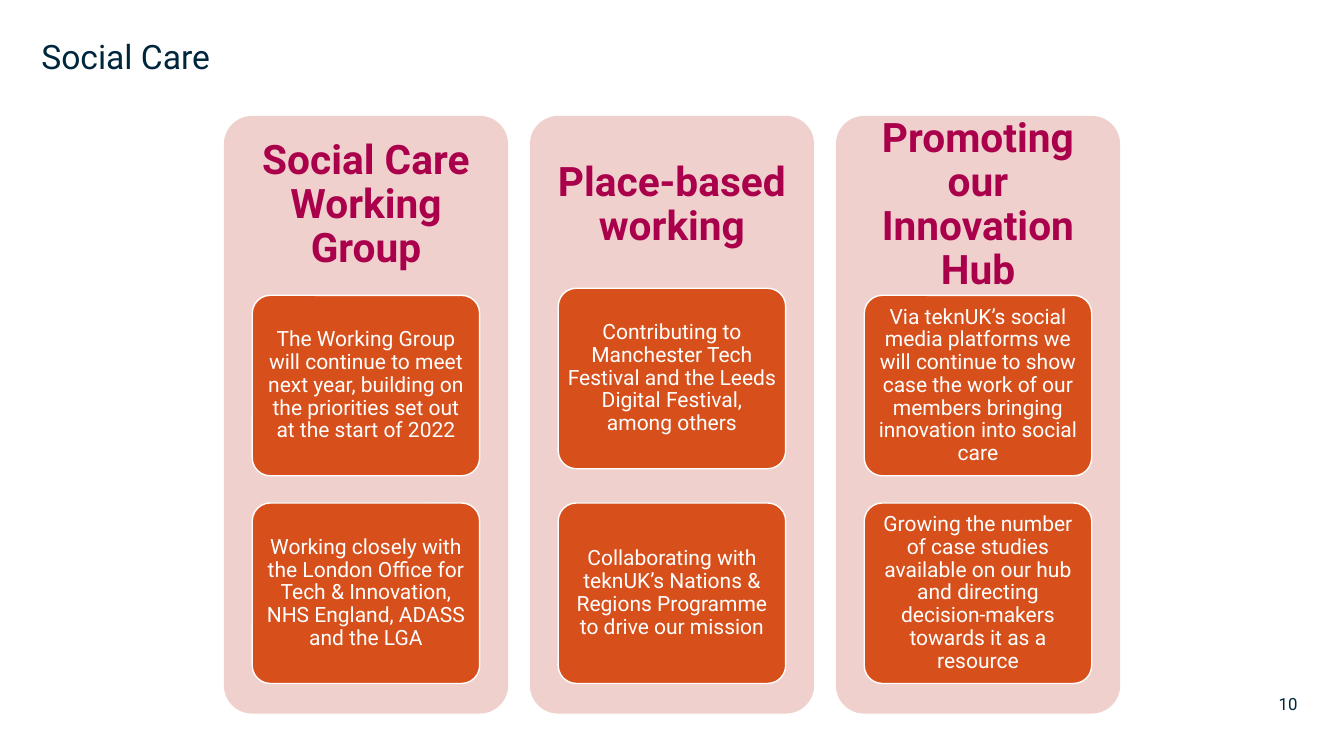
from pptx import Presentation
from pptx.dml.color import RGBColor
from pptx.enum.shapes import MSO_SHAPE as Shape
from pptx.enum.text import MSO_ANCHOR as Anchor, MSO_AUTO_SIZE as Fit, PP_ALIGN as Align
from pptx.util import Inches, Pt

FONT = "Roboto"
NAVY = RGBColor(0x00, 0x26, 0x3E)
PLUM = RGBColor(0xAA, 0x00, 0x4C)
PINK = RGBColor(0xF0, 0xD0, 0xCD)
RUST = RGBColor(0xD7, 0x50, 0x1C)
WHITE = RGBColor(0xFF, 0xFF, 0xFF)

# Heading, top of the first card, card texts
COLUMNS = [
    ("Social Care Working Group", 2.93, [
        "The Working Group will continue to meet next year, building on "
        "the priorities set out at the start of 2022",
        "Working closely with the London Office for Tech & Innovation, "
        "NHS England, ADASS and the LGA"]),
    ("Place-based working", 2.86, [
        "Contributing to Manchester Tech Festival and the Leeds Digital "
        "Festival, among others",
        "Collaborating with teknUK’s Nations & Regions Programme to drive "
        "our mission"]),
    ("Promoting our Innovation Hub", 2.93, [
        "Via teknUK’s social media platforms we will continue to show case "
        "the work of our members bringing innovation into social care",
        "Growing the number of case studies available on our hub and "
        "directing decision-makers towards it as a resource"]),
]
LAST_TOP = 4.99


def write(shape, text, size, color, align=Align.CENTER, anchor=Anchor.MIDDLE,
          pad=(0, 0), bold=False):
    """Fill a shape with one paragraph; pad is (sides, top and bottom) in inches."""
    frame = shape.text_frame
    frame.word_wrap = True
    frame.auto_size = Fit.NONE
    frame.vertical_anchor = anchor
    frame.margin_left = frame.margin_right = Inches(pad[0])
    frame.margin_top = frame.margin_bottom = Inches(pad[1])
    frame.text = text
    para = frame.paragraphs[0]
    para.alignment = align
    para.line_spacing = 0.9
    para.space_before = Pt(0)
    font = para.font
    font.name, font.size, font.bold = FONT, Pt(size), bold
    font.color.rgb = color


def add_round(slide, box, fill):
    shape = slide.shapes.add_shape(Shape.ROUNDED_RECTANGLE, *map(Inches, box))
    shape.adjustments[0] = 0.1
    shape.shadow.inherit = False
    shape.fill.solid()
    shape.fill.fore_color.rgb = fill
    shape.line.fill.background()
    return shape


def add_label(slide, box, *args, **style):
    write(slide.shapes.add_textbox(*map(Inches, box)), *args, **style)


def add_title(slide, box, text):
    title = slide.shapes.title
    title.left, title.top, title.width, title.height = map(Inches, box)
    write(title, text, 24, NAVY, Align.LEFT, Anchor.TOP)


def add_card(slide, box, text):
    card = add_round(slide, box, RUST)
    card.line.color.rgb = WHITE
    card.line.width = Pt(1)
    write(card, text, 15, WHITE, pad=(0.04, 0.03))


def add_column(slide, box, head, first, texts):
    left, top, width, height = box
    add_round(slide, box, PINK)
    add_label(slide, (left, top, width, 0.3 * height), head, 29, PLUM,
              pad=(0.12, 0.12), bold=True)
    for y, text in zip((first, LAST_TOP), texts):
        add_card(slide, (left + 0.1 * width, y, 0.8 * width, 1.79), text)


def add_columns(slide, box, width):
    left, top, span, height = box
    step = (span - width) / (len(COLUMNS) - 1)
    for i, column in enumerate(COLUMNS):
        add_column(slide, (left + i * step, top, width, height), *column)


def main():
    deck = Presentation()
    deck.slide_width, deck.slide_height = Inches(13.33), Inches(7.5)
    slide = deck.slides.add_slide(deck.slide_layouts[5])
    add_title(slide, (0.41, 0.4, 9.05, 0.87), "Social Care")
    add_columns(slide, (2.22, 1.15, 8.89, 5.93), 2.82)
    add_label(slide, (11.69, 6.84, 1.18, 0.31), "10", 12, NAVY, Align.RIGHT)
    deck.save("out.pptx")


if __name__ == "__main__":
    main()
